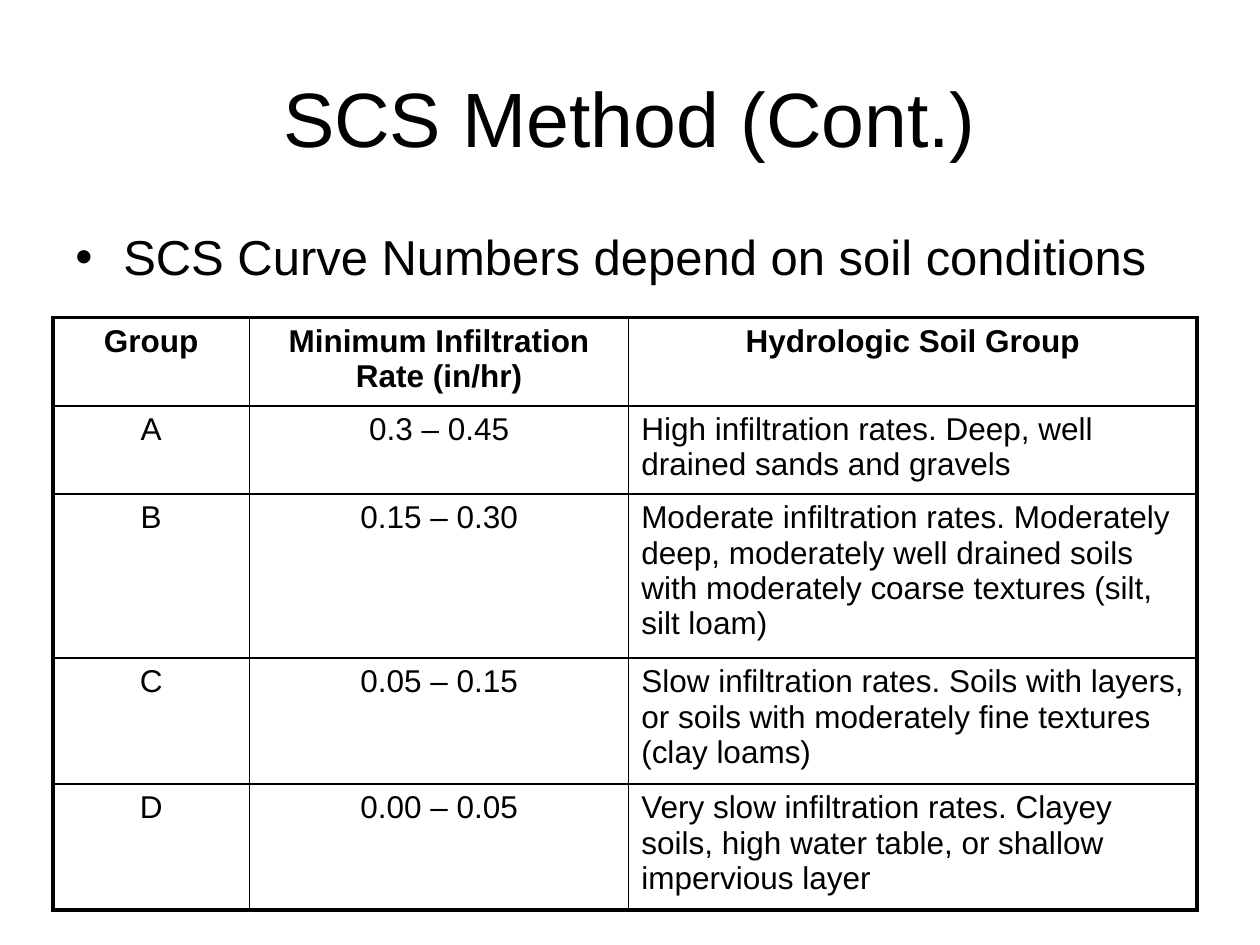
"""Build the SCS Method slide with its soil group table."""
import lxml.etree
import pptx
import pptx.util
from pptx.dml.color import RGBColor
from pptx.enum.text import MSO_ANCHOR, PP_ALIGN
from pptx.oxml.ns import qn
from pptx.util import Inches

COLORS = {"ink": "000000", "paper": "FFFFFF"}
FONT = "Arial"
TITLE = "SCS Method (Cont.)"
BULLET = "SCS Curve Numbers depend on soil conditions"
ROWS = [
    ("Group", "Minimum Infiltration Rate (in/hr)", "Hydrologic Soil Group"),
    ("A", "0.3 – 0.45", "High infiltration rates. Deep, well drained sands and gravels"),
    ("B", "0.15 – 0.30", "Moderate infiltration rates. Moderately deep, moderately well "
     "drained soils with moderately coarse textures (silt, silt loam)"),
    ("C", "0.05 – 0.15", "Slow infiltration rates. Soils with layers, or soils with "
     "moderately fine textures (clay loams)"),
    ("D", "0.00 – 0.05", "Very slow infiltration rates. Clayey soils, high water table, "
     "or shallow impervious layer"),
]
COLUMN_WIDTHS = [1.56, 3.01, 4.51]
ROW_HEIGHTS = [0.7, 0.7, 1.3, 1, 1]
OUTER_LINE, INNER_LINE = 2.25, 1


def write_text(text_frame, text, size, alignment, bold=False):
    text_frame.text = text
    text_frame.word_wrap = True
    paragraph = text_frame.paragraphs[0]
    paragraph.alignment = alignment
    font = paragraph.runs[0].font
    font.name, font.size, font.bold = FONT, pptx.util.Pt(size), bold
    font.color.rgb = RGBColor.from_string(COLORS["ink"])
    return paragraph


def add_text(slide, box, text, size, alignment, anchor):
    text_frame = slide.shapes.add_textbox(*map(Inches, box)).text_frame
    text_frame.vertical_anchor = anchor
    return write_text(text_frame, text, size, alignment)


def add_bullet(paragraph):
    properties = paragraph._p.get_or_add_pPr()
    properties.set("marL", str(Inches(0.38)))
    properties.set("indent", str(Inches(-0.38)))
    lxml.etree.SubElement(properties, qn("a:buFont"), typeface=FONT)
    lxml.etree.SubElement(properties, qn("a:buChar"), char="•")


def set_borders(cell, outer_sides):
    properties = cell._tc.get_or_add_tcPr()
    for side, is_outer in outer_sides.items():
        width = pptx.util.Pt(OUTER_LINE if is_outer else INNER_LINE)
        line = lxml.etree.SubElement(properties, qn(f"a:ln{side}"), w=str(width))
        fill = lxml.etree.SubElement(line, qn("a:solidFill"))
        lxml.etree.SubElement(fill, qn("a:srgbClr"), val=COLORS["ink"])


def add_soil_table(slide, left, top):
    size = Inches(sum(COLUMN_WIDTHS)), Inches(sum(ROW_HEIGHTS))
    table = slide.shapes.add_table(
        len(ROWS), len(COLUMN_WIDTHS), Inches(left), Inches(top), *size).table
    table.first_row = table.horz_banding = False
    for column, width in zip(table.columns, COLUMN_WIDTHS):
        column.width = Inches(width)
    last_row, last_column = len(ROWS) - 1, len(COLUMN_WIDTHS) - 1
    for row, texts in enumerate(ROWS):
        table.rows[row].height = Inches(ROW_HEIGHTS[row])
        for column, text in enumerate(texts):
            cell = table.cell(row, column)
            is_description = row > 0 and column == last_column
            alignment = PP_ALIGN.LEFT if is_description else PP_ALIGN.CENTER
            write_text(cell.text_frame, text, 18, alignment, bold=row == 0)
            set_borders(cell, {"L": column == 0, "R": column == last_column,
                               "T": row == 0, "B": row == last_row})
            cell.fill.background()


def main():
    presentation = pptx.Presentation()
    presentation.slide_width, presentation.slide_height = Inches(10), Inches(7.5)
    slide = presentation.slides.add_slide(presentation.slide_layouts[6])
    background = slide.background.fill
    background.solid()
    background.fore_color.rgb = RGBColor.from_string(COLORS["paper"])
    add_text(slide, (0.5, 0.3, 9, 1.25), TITLE, 44, PP_ALIGN.CENTER, MSO_ANCHOR.MIDDLE)
    add_bullet(add_text(slide, (0.5, 1.75, 8.99, 4.95), BULLET, 28,
                        PP_ALIGN.LEFT, MSO_ANCHOR.TOP))
    add_soil_table(slide, 0.42, 2.52)
    presentation.save("out.pptx")


if __name__ == "__main__":
    main()
